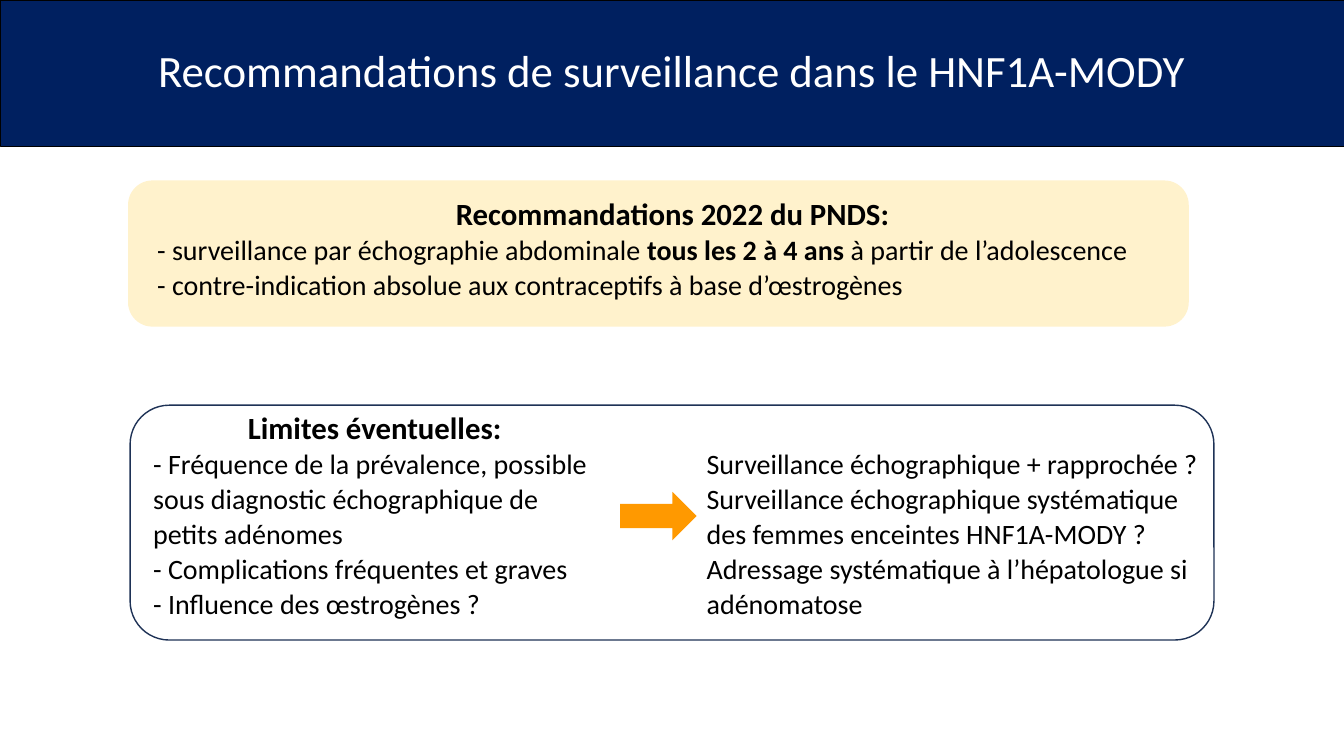
from dataclasses import dataclass

from pptx import Presentation
from pptx.dml.color import RGBColor
from pptx.enum.shapes import MSO_SHAPE
from pptx.enum.text import MSO_ANCHOR, MSO_AUTO_SIZE, PP_ALIGN
from pptx.shapes.autoshape import Shape
from pptx.slide import Slide
from pptx.text.text import TextFrame
from pptx.util import Emu, Pt

RECTANGLE = MSO_SHAPE.RECTANGLE
ROUNDED = MSO_SHAPE.ROUNDED_RECTANGLE
ARROW = MSO_SHAPE.RIGHT_ARROW
LEFT, CENTER = PP_ALIGN.LEFT, PP_ALIGN.CENTER
MIDDLE = MSO_ANCHOR.MIDDLE
GROW = MSO_AUTO_SIZE.SHAPE_TO_FIT_TEXT

EMU_PER_PX = 9144  # 100 px to the inch
PAGE_WIDTH, PAGE_HEIGHT = 1333, 750
FONT = "Calibri"
BLACK, WHITE = "000000", "FFFFFF"
NAVY, CREAM, ORANGE, OUTLINE = "002060", "FFF2CC", "FF9900", "1E3256"
BODY_SPACING = Pt(25)


@dataclass(frozen=True)
class Area:
    left: int
    top: int
    width: int
    height: int

    def emu(self) -> tuple[Emu, Emu, Emu, Emu]:
        return px(self.left), px(self.top), px(self.width), px(self.height)


@dataclass(frozen=True)
class TextBlock:
    area: Area
    heading: str
    lines: list[list[str]]  # within a line, every second span is bold


def px(length: int) -> Emu:
    return Emu(length * EMU_PER_PX)


def color(value: str) -> RGBColor:
    return RGBColor.from_string(value)


def add_panel(page: Slide, kind: MSO_SHAPE, area: Area, *, fill: str = "",
              line: str = "", line_width: float = 1) -> Shape:
    panel = page.shapes.add_shape(kind, *area.emu())
    panel.shadow.inherit = False
    if fill:
        panel.fill.solid()
        panel.fill.fore_color.rgb = color(fill)
    else:
        panel.fill.background()
    if line:
        panel.line.color.rgb = color(line)
        panel.line.width = Pt(line_width)
    else:
        panel.line.fill.background()
    return panel


def write_para(frame: TextFrame, spans: list[str], *, first: bool, size: int = 20,
               ink: str = BLACK, bold: bool = False, align: PP_ALIGN = LEFT,
               spacing: float = BODY_SPACING) -> None:
    """Write one paragraph; every second span switches the weight."""
    para = frame.paragraphs[0] if first else frame.add_paragraph()
    para.alignment = align
    para.line_spacing = spacing
    for index, text in enumerate(spans):
        span = para.add_run()
        span.text = text
        span.font.name = FONT
        span.font.size = Pt(size)
        span.font.bold = bold != (index % 2 == 1)
        span.font.color.rgb = color(ink)


def add_text_block(page: Slide, block: TextBlock) -> None:
    frame = page.shapes.add_textbox(*block.area.emu()).text_frame
    frame.word_wrap = True
    frame.auto_size = GROW
    if block.heading:
        write_para(frame, [block.heading], first=True, size=22, bold=True, align=CENTER)
    for index, spans in enumerate(block.lines):
        write_para(frame, spans, first=index == 0 and not block.heading)


def add_title(page: Slide, text: str) -> None:
    banner = add_panel(page, RECTANGLE, Area(0, 0, PAGE_WIDTH, 145),
                       fill=NAVY, line=BLACK, line_width=0.5)
    frame = banner.text_frame
    frame.word_wrap = True
    frame.vertical_anchor = MIDDLE
    write_para(frame, [text], first=True, size=32, ink=WHITE, align=CENTER, spacing=0.9)


GUIDELINES = TextBlock(Area(146, 190, 1042, 113), "Recommandations 2022 du PNDS:", [
    ["- surveillance par échographie abdominale ", "tous les 2 à 4 ans ",
     "à partir de l’adolescence"],
    ["- contre-indication absolue aux contraceptifs à base d’œstrogènes"],
])
LIMITS = TextBlock(Area(142, 402, 459, 219), "Limites éventuelles:", [
    ["- Fréquence de la prévalence, possible sous diagnostic échographique "
     "de petits adénomes"],
    ["- Complications fréquentes et graves"],
    ["- Influence des œstrogènes ?"],
])
PROPOSALS = TextBlock(Area(691, 437, 512, 184), "", [
    ["Surveillance échographique + rapprochée ?"],
    ["Surveillance échographique systématique des femmes enceintes HNF1A-MODY ?"],
    ["Adressage systématique à l’hépatologue si adénomatose"],
])


def main() -> None:
    deck = Presentation()
    deck.slide_width, deck.slide_height = px(PAGE_WIDTH), px(PAGE_HEIGHT)
    page = deck.slides.add_slide(deck.slide_layouts[6])

    add_panel(page, ROUNDED, Area(127, 179, 1052, 145), fill=CREAM)
    for block in (GUIDELINES, LIMITS, PROPOSALS):
        add_text_block(page, block)
    add_title(page, "Recommandations de surveillance dans le HNF1A-MODY")
    add_panel(page, ROUNDED, Area(129, 402, 1075, 233), line=OUTLINE)
    add_panel(page, ARROW, Area(615, 488, 76, 48), fill=ORANGE)

    deck.save("out.pptx")


if __name__ == "__main__":
    main()
